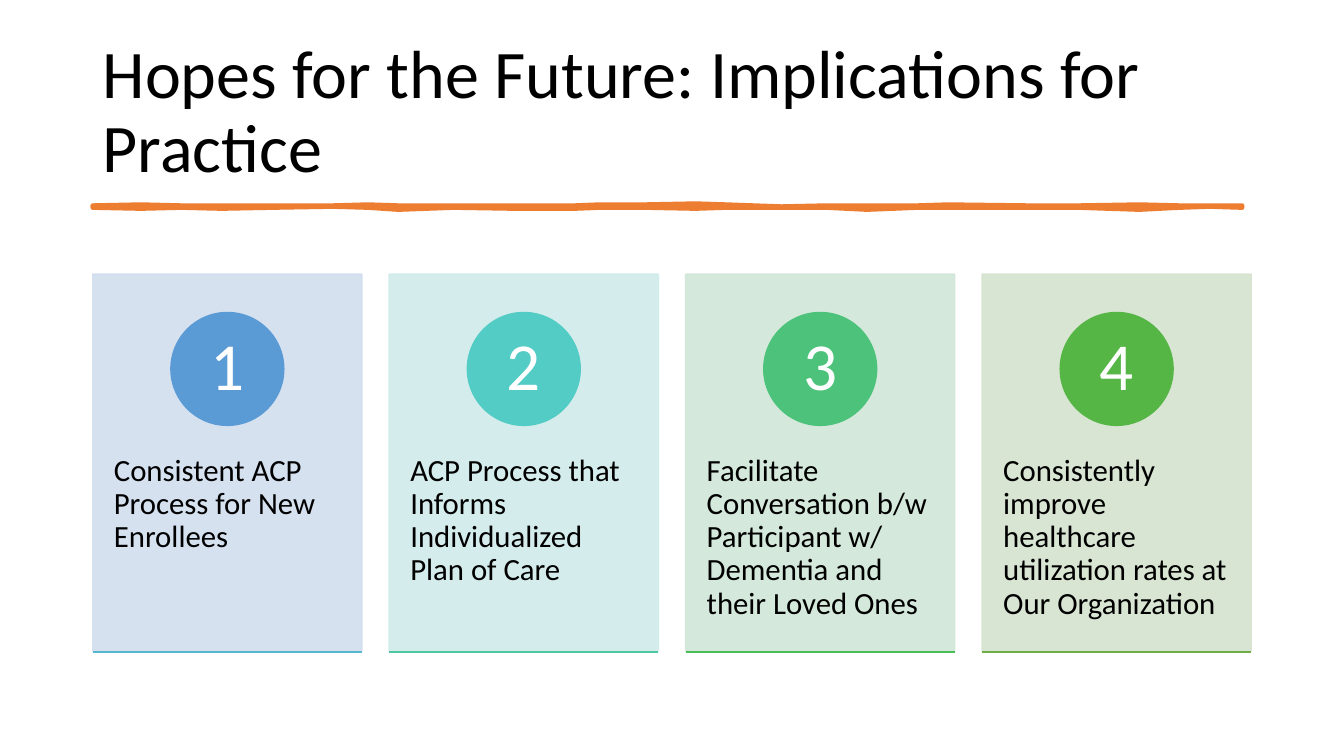
from dataclasses import dataclass

from lxml import etree
from pptx import Presentation
from pptx.dml import color
from pptx.enum import shapes, text
from pptx.oxml import ns
from pptx.util import Inches, Pt

FONT = "Calibri"
BLACK, WHITE, ORANGE = "000000", "FFFFFF", "ED7D31"
CARD_LEFT, CARD_TOP, CARD_WIDTH, CARD_HEIGHT = 0.92, 2.72, 2.67, 3.74
CARD_PITCH = 2.94
BADGE_SIZE, BADGE_TOP = 1.12, 3.1
WORDING_TOP, WORDING_HEIGHT = 4.15, 2.25
BASELINE_TOP = 6.47


@dataclass
class Card:
    wording: str
    panel: str
    badge: str
    baseline: str


CARDS = [
    Card("Consistent ACP Process for New Enrollees", "D2DEEF", "5B9BD5", "57B7D1"),
    Card("ACP Process that Informs Individualized Plan of Care",
         "D0ECEA", "53CCC5", "4FC7A0"),
    Card("Facilitate Conversation b/w Participant w/ Dementia and their Loved Ones",
         "D0E7D8", "4CC27B", "48BD58"),
    Card("Consistently improve healthcare utilization rates at Our Organization",
         "D5E3CF", "55B646", "70AD47"),
]

# Hand-drawn rule: x, upper edge, lower edge
BRUSH_STROKE = [
    (0.92, 2.04, 2.06), (1.4, 2.03, 2.07), (1.8, 2.04, 2.06), (2.2, 2.04, 2.07),
    (2.7, 2.04, 2.06), (3.3, 2.04, 2.05), (3.65, 2.03, 2.06), (3.95, 2.04, 2.08),
    (4.5, 2.04, 2.06), (5.1, 2.04, 2.07), (5.7, 2.04, 2.07), (5.95, 2.03, 2.06),
    (6.4, 2.03, 2.06), (6.9, 2.02, 2.07), (7.2, 2.03, 2.06), (7.75, 2.05, 2.06),
    (8.2, 2.04, 2.06), (8.6, 2.04, 2.08), (9.1, 2.04, 2.06), (9.4, 2.03, 2.06),
    (10.2, 2.04, 2.06), (10.7, 2.04, 2.06), (11.3, 2.03, 2.08), (11.7, 2.04, 2.06),
    (12.0, 2.04, 2.05), (12.32, 2.04, 2.06),
]


def rgb(value: str) -> color.RGBColor:
    return color.RGBColor.from_string(value)


def paint(shape, value: str, line_width: float = 1) -> None:
    """Give fill and outline one colour, without a shadow."""
    shape.shadow.inherit = False
    shape.fill.solid()
    shape.fill.fore_color.rgb = rgb(value)
    shape.line.color.rgb = rgb(value)
    shape.line.width = Pt(line_width)


def set_opacity(shape, percent: int) -> None:
    for tint in shape._element.spPr.iter(ns.qn("a:srgbClr")):
        etree.SubElement(tint, ns.qn("a:alpha")).set("val", str(percent * 1000))


def write(shape, wording: str, size: float, value: str, side: float, end: float,
          anchor=text.MSO_ANCHOR.TOP, align=text.PP_ALIGN.LEFT) -> None:
    """Fill a text frame with one paragraph, inset by side and end inches."""
    frame = shape.text_frame
    frame.word_wrap = True
    frame.vertical_anchor = anchor
    frame.margin_left = frame.margin_right = Inches(side)
    frame.margin_top = frame.margin_bottom = Inches(end)
    paragraph = frame.paragraphs[0]
    paragraph.text = wording
    paragraph.alignment = align
    paragraph.line_spacing = 0.9
    paragraph.font.name = FONT
    paragraph.font.size = Pt(size)
    paragraph.font.color.rgb = rgb(value)


def draw_title(slide) -> None:
    title = slide.shapes.add_textbox(Inches(0.92), Inches(0.4), Inches(11.5), Inches(1.45))
    write(title, "Hopes for the Future: Implications for Practice", 48.6, BLACK,
          0.1, 0.05, text.MSO_ANCHOR.MIDDLE)


def draw_brush_stroke(slide) -> None:
    upper = [(Inches(x), Inches(top)) for x, top, _ in BRUSH_STROKE]
    lower = [(Inches(x), Inches(bottom)) for x, _, bottom in reversed(BRUSH_STROKE)]
    outline = slide.shapes.build_freeform(*upper[0])
    outline.add_line_segments(upper[1:] + lower, close=True)
    stroke = outline.convert_to_shape()
    paint(stroke, ORANGE, 3.25)
    etree.SubElement(stroke.line._get_or_add_ln(), ns.qn("a:round"))


def draw_card(slide, index: int, card: Card) -> None:
    left = CARD_LEFT + index * CARD_PITCH
    panel = slide.shapes.add_shape(
        shapes.MSO_SHAPE.RECTANGLE, Inches(left), Inches(CARD_TOP),
        Inches(CARD_WIDTH), Inches(CARD_HEIGHT))
    paint(panel, card.panel)
    set_opacity(panel, 90)

    wording = slide.shapes.add_textbox(
        Inches(left), Inches(WORDING_TOP), Inches(CARD_WIDTH), Inches(WORDING_HEIGHT))
    write(wording, card.wording, 22, BLACK, 0.21, 0.36)

    badge = slide.shapes.add_shape(
        shapes.MSO_SHAPE.OVAL, Inches(left + (CARD_WIDTH - BADGE_SIZE) / 2),
        Inches(BADGE_TOP), Inches(BADGE_SIZE), Inches(BADGE_SIZE))
    paint(badge, card.badge)
    write(badge, str(index + 1), 48, WHITE, 0.09, 0.01,
          text.MSO_ANCHOR.MIDDLE, text.PP_ALIGN.CENTER)

    baseline = slide.shapes.add_connector(
        shapes.MSO_CONNECTOR.STRAIGHT, Inches(left), Inches(BASELINE_TOP),
        Inches(left + CARD_WIDTH), Inches(BASELINE_TOP))
    baseline.line.color.rgb = rgb(card.baseline)
    baseline.line.width = Pt(1)
    etree.SubElement(baseline._element.spPr, ns.qn("a:effectLst"))


def main() -> None:
    deck = Presentation()
    deck.slide_width, deck.slide_height = Inches(13.33), Inches(7.5)
    slide = deck.slides.add_slide(deck.slide_layouts[6])
    draw_title(slide)
    draw_brush_stroke(slide)
    for index, card in enumerate(CARDS):
        draw_card(slide, index, card)
    deck.save("out.pptx")


if __name__ == "__main__":
    main()
